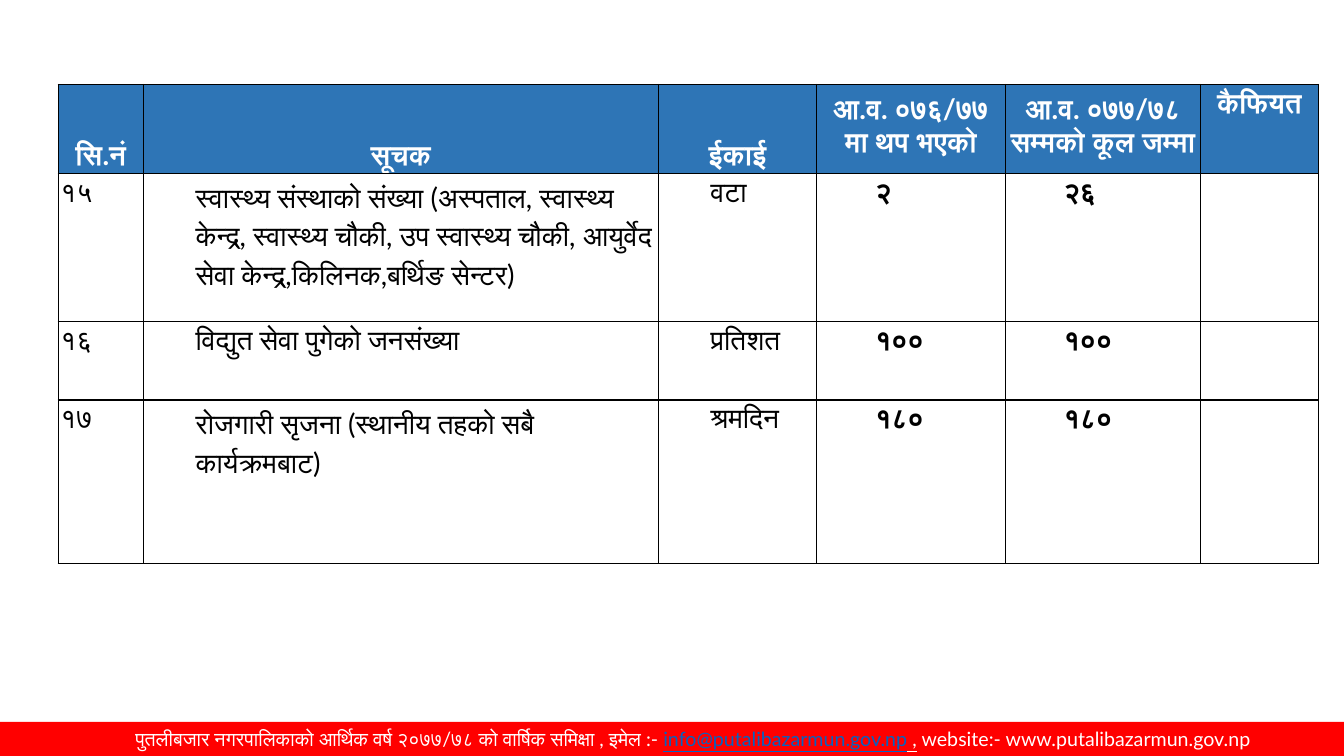
from dataclasses import dataclass

from lxml import etree
from pptx import Presentation
from pptx.dml.color import RGBColor
from pptx.enum.shapes import MSO_SHAPE
from pptx.enum.text import MSO_ANCHOR, PP_ALIGN
from pptx.oxml.ns import qn
from pptx.util import Cm, Pt

RECT = MSO_SHAPE.RECTANGLE
TOP, MIDDLE, BOTTOM = MSO_ANCHOR.TOP, MSO_ANCHOR.MIDDLE, MSO_ANCHOR.BOTTOM
LEFT, CENTER = PP_ALIGN.LEFT, PP_ALIGN.CENTER


@dataclass(frozen=True)
class Theme:
    font: str = "Lato"
    header: str = "2E75B6"
    footer: str = "FF0000"
    link: str = "0563C1"
    white: str = "FFFFFF"
    black: str = "000000"
    table_size: int = 20
    footer_size: int = 14
    border: int = 1
    spacing: float = 1.15


@dataclass(frozen=True)
class Column:
    title: str
    width: float
    anchor: MSO_ANCHOR = TOP
    indent: float = 0
    bold: bool = False


COLUMNS = [
    Column("सि.नं", 2.14, BOTTOM),
    Column("सूचक", 12.98, BOTTOM, 1.27),
    Column("ईकाई", 3.99, BOTTOM, 1.27),
    Column("आ.व. ०७६/७७ मा थप भएको", 4.75, indent=1.43, bold=True),
    Column("आ.व. ०७७/७८ सम्मको कूल जम्मा", 4.93, indent=1.43, bold=True),
    Column("कैफियत", 2.96),
]
ROWS = [
    ["१५", "स्वास्थ्य संस्थाको संख्या (अस्पताल, स्वास्थ्य केन्द्र, स्वास्थ्य चौकी, "
     "उप स्वास्थ्य चौकी, आयुर्वेद सेवा केन्द्र,किलिनक,बर्थिङ सेन्टर)", "वटा", "२", "२६", ""],
    ["१६", "विद्युत सेवा पुगेको जनसंख्या", "प्रतिशत", "१००", "१००", ""],
    ["१७", "रोजगारी सृजना (स्थानीय तहको सबै कार्यक्रमबाट)", "श्रमदिन", "१८०", "१८०", ""],
]
HEIGHTS = [2.24, 3.73, 1.98, 4.11]


class Deck:
    def __init__(self, theme):
        self.theme = theme
        self.prs = Presentation()
        self.prs.slide_width, self.prs.slide_height = Cm(33.87), Cm(19.05)
        self.s = self.prs.slides.add_slide(self.prs.slide_layouts[6])

    def run(self, p, text, size, color, bold=False, underline=False):
        r = p.add_run()
        r.text = text
        f = r.font
        f.name, f.size, f.bold, f.underline = self.theme.font, Pt(size), bold, underline
        f.color.rgb = RGBColor.from_string(color)

    def bar(self, left, top, width, height, color, inset, runs):
        sp = self.s.shapes.add_shape(RECT, Cm(left), Cm(top), Cm(width), Cm(height))
        sp.shadow.inherit = False
        sp.fill.solid()
        sp.fill.fore_color.rgb = RGBColor.from_string(color)
        sp.line.fill.background()
        tf = sp.text_frame
        tf.word_wrap = True
        tf.vertical_anchor = MIDDLE
        tf.margin_left, tf.margin_right = Cm(inset), Cm(0)
        tf.margin_top = tf.margin_bottom = Cm(0)
        p = tf.paragraphs[0]
        p.alignment = CENTER
        for text, run_color, underline in runs:
            self.run(p, text, self.theme.footer_size, run_color, underline=underline)

    def borders(self, cell):
        props = cell._tc.get_or_add_tcPr()
        for i, side in enumerate(("lnL", "lnR", "lnT", "lnB")):
            ln = etree.Element(qn(f"a:{side}"), w=str(Pt(self.theme.border)))
            fill = etree.SubElement(ln, qn("a:solidFill"))
            etree.SubElement(fill, qn("a:srgbClr"), val=self.theme.black)
            props.insert(i, ln)

    def cell(self, cell, text, fill, color, bold, align, anchor=TOP, indent=0):
        cell.fill.solid()
        cell.fill.fore_color.rgb = RGBColor.from_string(fill)
        cell.margin_left = cell.margin_right = Cm(0.05)
        cell.margin_top = cell.margin_bottom = Cm(0.05)
        cell.vertical_anchor = anchor
        self.borders(cell)
        if text:
            p = cell.text_frame.paragraphs[0]
            p.alignment = align
            p.line_spacing = self.theme.spacing if anchor == TOP else 1.0
            p._p.get_or_add_pPr().set("marL", str(Cm(indent)))
            self.run(p, text, self.theme.table_size, color, bold)

    def table(self, left, top, columns, rows, heights):
        t = self.theme
        width = sum(column.width for column in columns)
        frame = self.s.shapes.add_table(len(heights), len(columns), Cm(left), Cm(top),
                                        Cm(width), Cm(sum(heights)))
        tbl = frame.table
        for row, height in zip(tbl.rows, heights):
            row.height = Cm(height)
        for i, column in enumerate(columns):
            tbl.columns[i].width = Cm(column.width)
            self.cell(tbl.cell(0, i), column.title, t.header, t.white, True, CENTER, column.anchor)
            for j, row in enumerate(rows, 1):
                self.cell(tbl.cell(j, i), row[i], t.white, t.black, column.bold, LEFT,
                          indent=column.indent)


def main():
    theme = Theme()
    deck = Deck(theme)
    deck.bar(0, 18.19, 33.87, 0.86, theme.footer, 1.06, [
        ("पुतलीबजार नगरपालिकाको आर्थिक वर्ष २०७७/७८ को वार्षिक समिक्षा , इमेल :- ", theme.white, False),
        ("info@putalibazarmun.gov.np", theme.link, True),
        (" ,", theme.white, True),
        (" website:- www.putalibazarmun.gov.np", theme.white, False),
    ])
    deck.table(1.47, 2.13, COLUMNS, ROWS, HEIGHTS)
    deck.prs.save("out.pptx")


if __name__ == "__main__":
    main()
